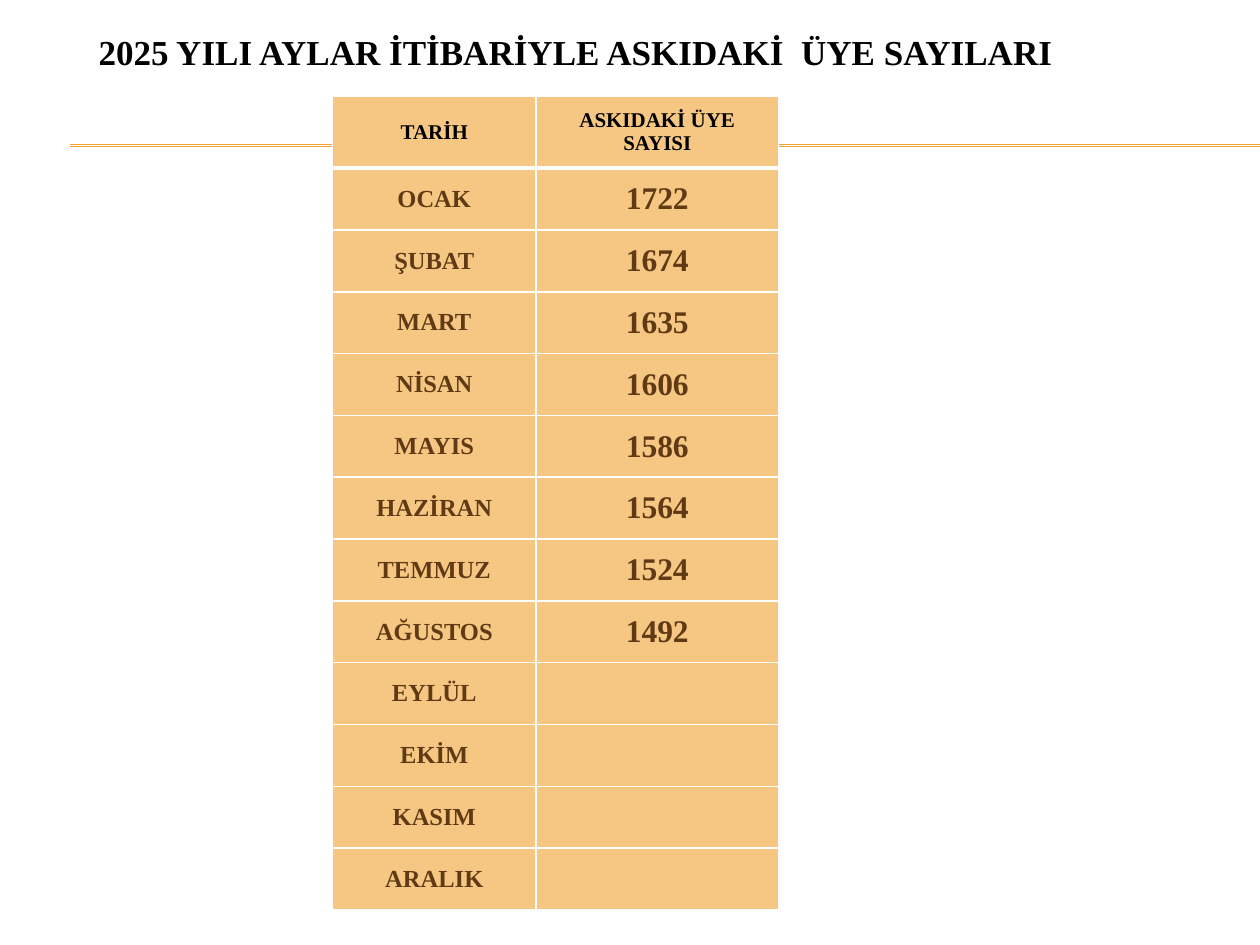
from lxml import etree
from pptx import Presentation
from pptx import util as u
from pptx.dml import color
from pptx.enum import shapes, text
from pptx.oxml import ns


def rgb(value):
    return color.RGBColor.from_string(value)


def write(tf, words, size, ink):
    p = tf.paragraphs[0]
    p.alignment = text.PP_ALIGN.CENTER
    r = p.add_run()
    r.text = words
    for key, value in {"name": "Times New Roman", "size": u.Pt(size), "bold": True}.items():
        setattr(r.font, key, value)
    r.font.color.rgb = rgb(ink)


prs = Presentation()
prs.slide_width, prs.slide_height = u.Cm(25.4), u.Cm(19.05)
s = prs.slides.add_slide(prs.slide_layouts[6])

for y in (2.92, 2.95):
    line = s.shapes.add_connector(
        shapes.MSO_CONNECTOR.STRAIGHT, u.Cm(1.42), u.Cm(y), u.Cm(25.4), u.Cm(y))
    line.line.color.rgb = rgb("F0A22E")
    line.line.width = u.Pt(0.75)
    etree.SubElement(line._element.spPr, ns.qn("a:effectLst"))

rows = [
    ("TARİH", "ASKIDAKİ ÜYE SAYISI"),
    ("OCAK", "1722"),
    ("ŞUBAT", "1674"),
    ("MART", "1635"),
    ("NİSAN", "1606"),
    ("MAYIS", "1586"),
    ("HAZİRAN", "1564"),
    ("TEMMUZ", "1524"),
    ("AĞUSTOS", "1492"),
    ("EYLÜL", ""),
    ("EKİM", ""),
    ("KASIM", ""),
    ("ARALIK", ""),
]
table = s.shapes.add_table(
    len(rows), 2, u.Cm(6.7), u.Cm(1.94), u.Cm(8.99), u.Cm(16.4)).table
for column, width in zip(table.columns, (4.11, 4.88)):
    column.width = u.Cm(width)

for i, row in enumerate(rows):
    table.rows[i].height = u.Cm(1.45 if i == 0 else 1.246)
    for j, words in enumerate(row):
        cell = table.cell(i, j)
        cell.vertical_anchor = text.MSO_ANCHOR.MIDDLE
        if words:
            size = 12 if i == 0 else (14, 18)[j]
            write(cell.text_frame, words, size, "000000" if i == 0 else "603A14")
        tcPr = cell._tc.get_or_add_tcPr()
        for side in "LRTB":
            thick = (i, side) in ((0, "B"), (1, "T"))
            ln = etree.SubElement(tcPr, ns.qn(f"a:ln{side}"), w=str(u.Pt(3 if thick else 1)))
            fill = etree.SubElement(ln, ns.qn("a:solidFill"))
            etree.SubElement(fill, ns.qn("a:srgbClr"), val="FFFFFF")
        cell.fill.solid()
        cell.fill.fore_color.rgb = rgb("F6C782")

sp = s.shapes.add_textbox(u.Cm(0.71), u.Cm(0.13), u.Cm(21.79), u.Cm(1.8))
tf = sp.text_frame
for key, value in {"word_wrap": True, "vertical_anchor": text.MSO_ANCHOR.MIDDLE}.items():
    setattr(tf, key, value)
write(tf, "2025 YILI AYLAR İTİBARİYLE ASKIDAKİ  ÜYE SAYILARI", 20, "000000")

prs.save("out.pptx")
